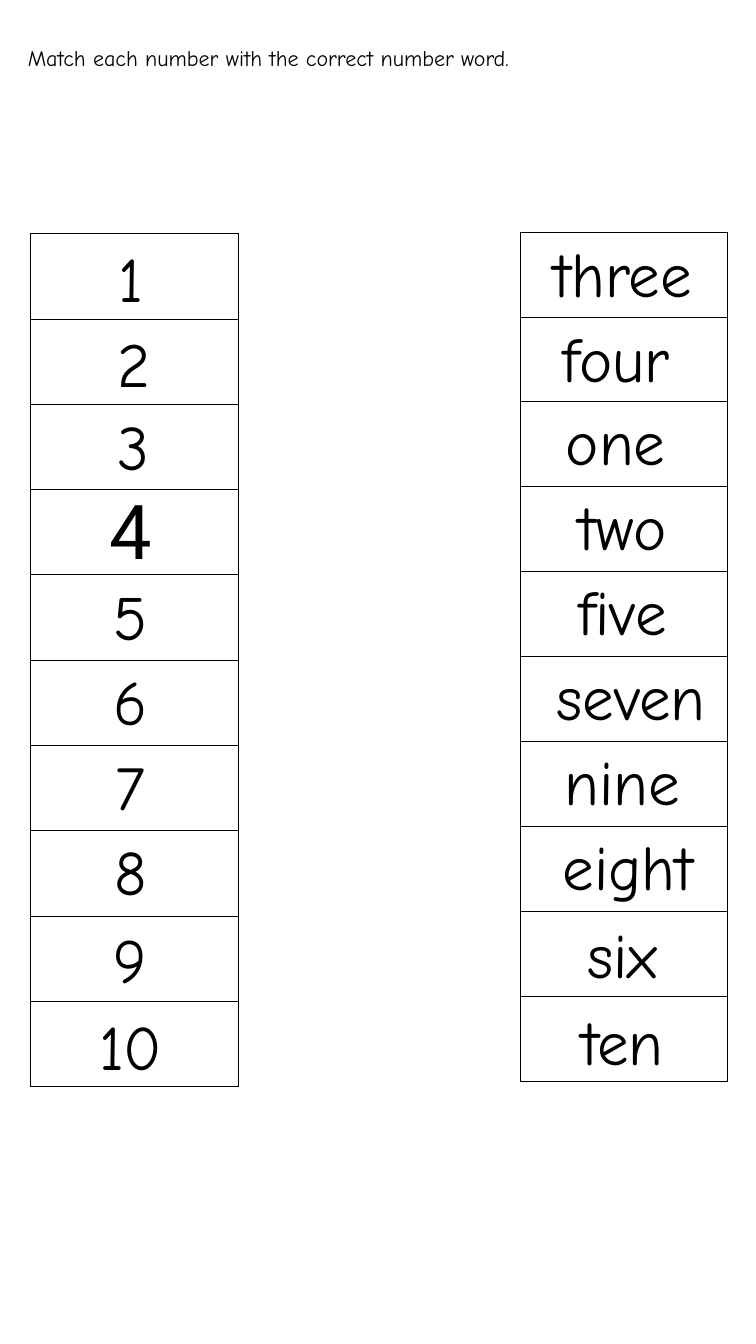
import pptx
import pptx.dml.color
import pptx.enum.text
import pptx.oxml
import pptx.oxml.ns
import pptx.util

Inches, Pt = pptx.util.Inches, pptx.util.Pt
ALIGN = pptx.enum.text.PP_ALIGN
ANCHOR = pptx.enum.text.MSO_ANCHOR
AUTO_SIZE = pptx.enum.text.MSO_AUTO_SIZE

BLACK = pptx.dml.color.RGBColor(0, 0, 0)
WHITE = pptx.dml.color.RGBColor(255, 255, 255)
FONT = "Comic Neue"

INSTRUCTION = "Match each number with the correct number word."

# Columns: left, top, height
NUMBER_COLUMN = (0.54, 4.12, 15.04)
WORD_COLUMN = (9.17, 4.09, 14.98)
COLUMN_W = 3.66
ROWS = 10

# Labels: text, left, top, width
LABELS = [
    ("1", 1.14, 4.18, 2.33),
    ("2", 1.19, 5.68, 2.33),
    ("3", 1.19, 7.13, 2.33),
    ("5", 1.14, 10.13, 2.33),
    ("6", 1.14, 11.63, 2.33),
    ("7", 1.14, 13.13, 2.33),
    ("8", 1.14, 14.63, 2.33),
    ("9", 1.14, 16.18, 2.33),
    ("10", 1.14, 17.72, 2.33),
    ("three", 9.19, 4.09, 3.58),
    ("four", 9.1, 5.59, 3.54),
    ("one", 9.69, 7.05, 2.33),
    ("two", 9.81, 8.55, 2.33),
    ("five", 9.81, 10.05, 2.33),
    ("seven", 9.31, 11.55, 3.64),
    ("nine", 9.81, 13.05, 2.33),
    ("eight", 9.52, 14.55, 3.11),
    ("six", 9.81, 16.09, 2.33),
    ("ten", 9.81, 17.63, 2.33),
]


def write(sp, text, size, font=FONT, align=ALIGN.LEFT):
    tf = sp.text_frame
    tf.text = text
    tf.word_wrap = True
    tf.auto_size = AUTO_SIZE.SHAPE_TO_FIT_TEXT
    tf.vertical_anchor = ANCHOR.TOP
    p = tf.paragraphs[0]
    p.alignment = align
    r = p.runs[0]
    r.font.name = font
    r.font.size = Pt(size)
    r.font.color.rgb = BLACK


def add_label(slide, text, left, top, width, height=1.45, size=80,
              font=FONT, align=ALIGN.CENTER):
    sp = slide.shapes.add_textbox(
        Inches(left), Inches(top), Inches(width), Inches(height))
    write(sp, text, size, font, align)


def border_cell(cell):
    """Draw a 1 pt black line on all four sides."""
    tc_pr = cell._tc.get_or_add_tcPr()
    for i, side in enumerate(("lnL", "lnR", "lnT", "lnB")):
        tc_pr.insert(i, pptx.oxml.parse_xml(
            f'<a:{side} {pptx.oxml.ns.nsdecls("a")} w="{Pt(1)}">'
            f'<a:solidFill><a:srgbClr val="{BLACK}"/></a:solidFill></a:{side}>'))


def add_column(slide, left, top, height):
    """Add a one-column table of empty bordered cells."""
    table = slide.shapes.add_table(
        ROWS, 1, Inches(left), Inches(top), Inches(COLUMN_W), Inches(height)).table
    table.first_row = False
    table.horz_banding = False
    for cell in table.iter_cells():
        cell.fill.solid()
        cell.fill.fore_color.rgb = WHITE
        border_cell(cell)


def main():
    prs = pptx.Presentation()
    prs.slide_width, prs.slide_height = Inches(13.33), Inches(23.7)
    slide = prs.slides.add_slide(prs.slide_layouts.get_by_name("Title Only"))

    title = slide.shapes.title
    title.left, title.top = Inches(0.39), Inches(0.74)
    title.width, title.height = Inches(12.03), Inches(0.57)
    write(title, INSTRUCTION, 28)

    for column in (NUMBER_COLUMN, WORD_COLUMN):
        add_column(slide, *column)
    for label in LABELS:
        add_label(slide, *label)
    add_label(slide, "4", 1.83, 8.49, 1.25, 1.72, 96, "Roboto", ALIGN.LEFT)

    prs.save("out.pptx")


if __name__ == "__main__":
    main()
